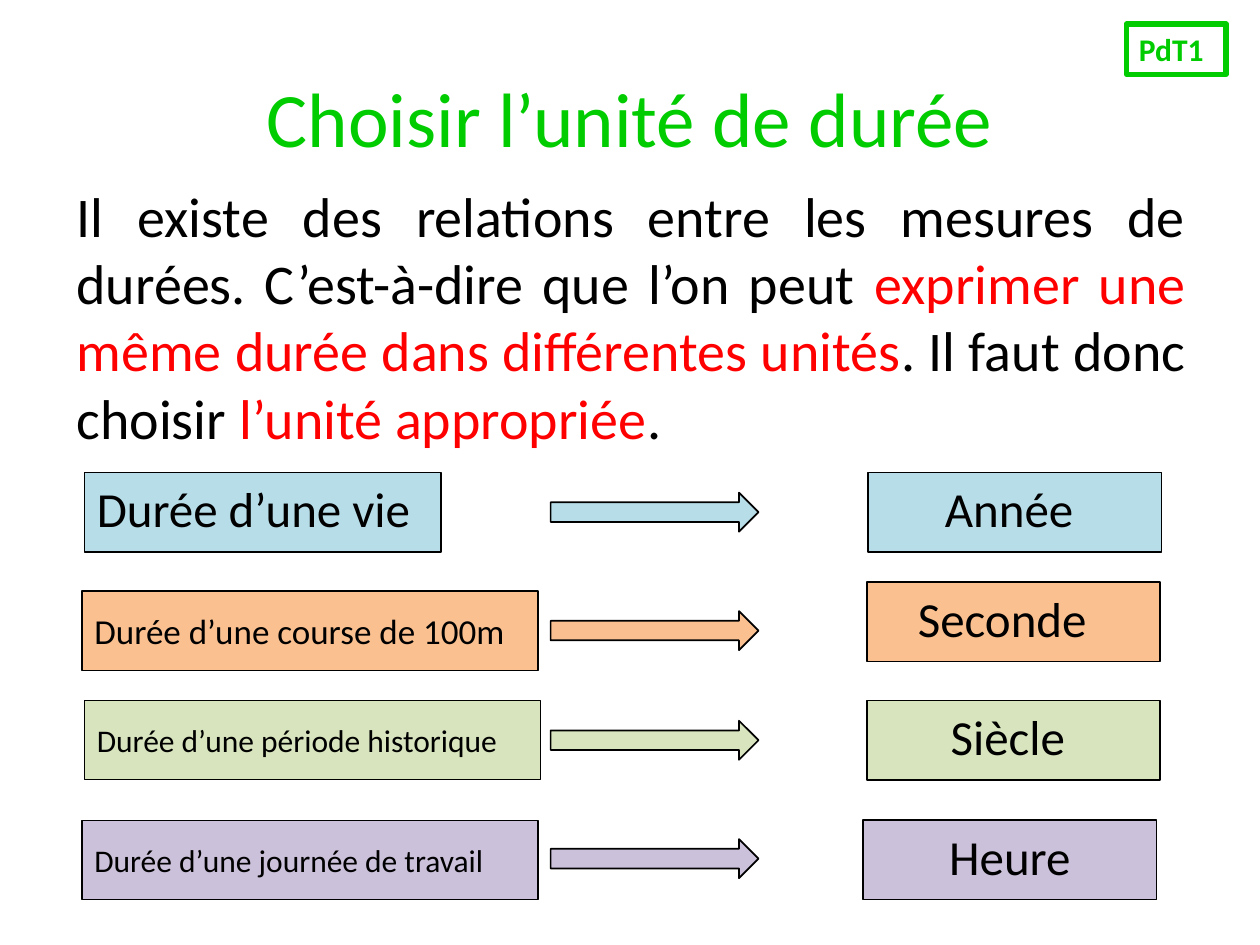
"""Build the slide that matches durations with their appropriate unit."""
from pptx import Presentation
from pptx import util as u
from pptx.dml import color
from pptx.enum import shapes, text

GREEN, RED, BLACK = "00CC00", "FF0000", "000000"
BOX_HEIGHT, UNIT_WIDTH = 0.63, 2.33
ARROW_LEFT, ARROW_WIDTH, ARROW_HEIGHT = 4.37, 1.65, 0.31
TOP, MIDDLE = text.MSO_ANCHOR.TOP, text.MSO_ANCHOR.MIDDLE
LEFT, CENTER, JUSTIFY = text.PP_ALIGN.LEFT, text.PP_ALIGN.CENTER, text.PP_ALIGN.JUSTIFY

EXPLANATION = [
    ("Il existe des relations entre les mesures de durées. C’est-à-dire que l’on peut ", BLACK),
    ("exprimer une même durée dans différentes unités", RED),
    (". Il faut donc choisir ", BLACK),
    ("l’unité appropriée", RED),
    (".", BLACK),
]

# fill, (duration, size, left, top, width, anchor, line), arrow top, (unit, left, top, right inset)
MATCHES = [
    ("B7DEE8", ("Durée d’une vie", 28, 0.67, 3.75, 2.83, TOP, 1), 3.91, ("Année", 6.89, 3.75, 0.19)),
    ("FAC090", ("Durée d’une course de 100m", 20, 0.65, 4.69, 3.62, MIDDLE, 0.75), 4.85,
     ("Seconde", 6.88, 4.62, 0.28)),
    ("D7E4BD", ("Durée d’une période historique", 18, 0.67, 5.56, 3.62, MIDDLE, 0.75), 5.72,
     ("Siècle", 6.88, 5.56, 0.19)),
    ("CCC1DA", ("Durée d’une journée de travail", 18, 0.65, 6.51, 3.62, MIDDLE, 0.75), 6.66,
     ("Heure", 6.85, 6.51, 0.1)),
]


def rgb(code):
    """Turn a hex string into a colour."""
    return color.RGBColor.from_string(code)


def inches(lengths):
    """Convert lengths to slide units."""
    return [u.Inches(length) for length in lengths]


def write(holder, parts, size, align=LEFT, anchor=TOP, bold=False):
    """Write coloured parts as one paragraph."""
    frame = holder.text_frame
    frame.word_wrap = True
    frame.vertical_anchor = anchor
    paragraph = frame.paragraphs[0]
    paragraph.alignment = align
    for wording, code in parts:
        run = paragraph.add_run()
        run.text = wording
        run.font.name = "Calibri"
        run.font.size = u.Pt(size)
        run.font.bold = bold
        run.font.color.rgb = rgb(code)


def add_text(slide, place, *args):
    """Add a plain text area."""
    write(slide.shapes.add_textbox(*inches(place)), *args)


def add_outlined(slide, kind, place, fill=None, line=BLACK, weight=1):
    """Add a flat outlined shape, hollow when it has no fill."""
    shape = slide.shapes.add_shape(kind, *inches(place))
    shape.shadow.inherit = False
    if fill:
        shape.fill.solid()
        shape.fill.fore_color.rgb = rgb(fill)
    else:
        shape.fill.background()
    shape.line.color.rgb = rgb(line)
    shape.line.width = u.Pt(weight)
    return shape


def add_match(slide, fill, duration, arrow_top, unit):
    """Add one row: duration, arrow and unit."""
    box = shapes.MSO_SHAPE.RECTANGLE
    wording, size, left, top, width, anchor, weight = duration
    duration_box = add_outlined(slide, box, (left, top, width, BOX_HEIGHT), fill, weight=weight)
    write(duration_box, [(wording, BLACK)], size, LEFT, anchor)
    add_outlined(slide, shapes.MSO_SHAPE.RIGHT_ARROW,
                 (ARROW_LEFT, arrow_top, ARROW_WIDTH, ARROW_HEIGHT), fill)
    wording, left, top, inset = unit
    unit_box = add_outlined(slide, box, (left, top, UNIT_WIDTH, BOX_HEIGHT), fill)
    unit_box.text_frame.margin_right = u.Inches(inset)
    write(unit_box, [(wording, BLACK)], 28, CENTER)


def main():
    """Build and save the slide."""
    deck = Presentation()
    deck.slide_width, deck.slide_height = inches((10, 7.5))
    slide = deck.slides.add_slide(deck.slide_layouts[6])
    add_text(slide, (0.5, 0.3, 9, 1.25), [("Choisir l’unité de durée", GREEN)], 44, CENTER, MIDDLE)
    add_text(slide, (0.51, 1.39, 9, 2.31), EXPLANATION, 32, JUSTIFY)
    for match in MATCHES:
        add_match(slide, *match)
    tag = add_outlined(slide, shapes.MSO_SHAPE.RECTANGLE, (8.94, 0.19, 0.79, 0.4), line=GREEN, weight=3)
    write(tag, [("PdT1", GREEN)], 18, bold=True)
    deck.save("out.pptx")


if __name__ == "__main__":
    main()
